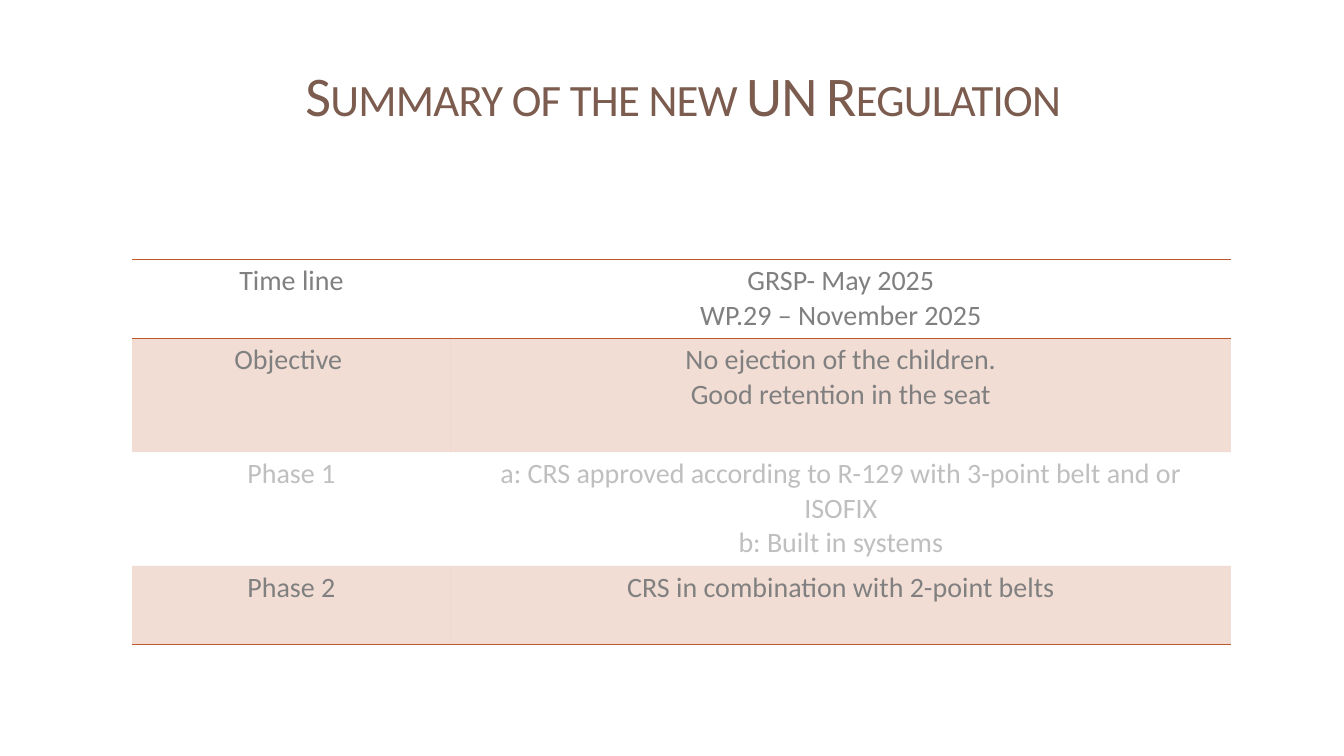
"""Build the slide that sums up the new UN Regulation in a table."""
from dataclasses import dataclass

from lxml.etree import SubElement
from pptx import Presentation
from pptx.dml.color import RGBColor
from pptx.enum.text import MSO_ANCHOR, MSO_AUTO_SIZE, PP_ALIGN
from pptx.oxml import parse_xml
from pptx.oxml.ns import nsdecls, qn
from pptx.slide import Slide
from pptx.table import _Cell
from pptx.text.text import TextFrame
from pptx.util import Cm, Pt


@dataclass(frozen=True)
class Theme:
    font: str = "Calibri"
    title: str = "7B5C4E"
    body: str = "808080"
    faded: str = "BFBFBF"
    accent: str = "BD582C"
    tint: int = 20
    rule: float = 1
    head: int = 40
    text: int = 20
    plain: str = "{2D5ABB26-0587-4C30-8999-92F81FD0307C}"


@dataclass(frozen=True)
class Row:
    label: str
    detail: str
    height: float
    color: str
    tinted: bool = False
    edges: tuple[str, ...] = ()


THEME = Theme()
ROWS = (
    Row("Time line", "GRSP- May 2025\nWP.29 – November 2025", 1.99,
        THEME.body, edges=("T", "B")),
    Row("Objective ", "No ejection of the children.\nGood retention in the seat", 2.87,
        THEME.body, tinted=True),
    Row("Phase 1", "a: CRS approved according to R-129 with 3-point belt and or ISOFIX\n"
        "b: Built in systems", 2.87, THEME.faded),
    Row("Phase 2", "CRS in combination with 2-point belts", 1.99,
        THEME.body, tinted=True, edges=("B",)),
)
WIDTHS = (8.03, 19.66)


def write(frame: TextFrame, text: str, *, size: int, color: str,
          spacing: float = 1, **marks: str) -> None:
    frame.text = text
    for para in frame.paragraphs:
        para.alignment = PP_ALIGN.CENTER
        para.line_spacing = spacing
        for run in para.runs:
            run.font.name = THEME.font
            run.font.size = Pt(size)
            run.font.color.rgb = RGBColor.from_string(color)
            for name, value in marks.items():
                run.font._element.set(name, value)


def paint(cell: _Cell, row: Row) -> None:
    props = cell._tc.get_or_add_tcPr()
    if row.tinted:
        cell.fill.solid()
        cell.fill.fore_color.rgb = RGBColor.from_string(THEME.accent)
        color = props.find(".//" + qn("a:srgbClr"))
        SubElement(color, qn("a:alpha")).set("val", str(THEME.tint * 1000))
    else:
        cell.fill.background()
    for spot, edge in enumerate(row.edges):
        props.insert(spot, parse_xml(
            f'<a:ln{edge} {nsdecls("a")} w="{Pt(THEME.rule)}"><a:solidFill>'
            f'<a:srgbClr val="{THEME.accent}"/></a:solidFill></a:ln{edge}>'))


def add_title(slide: Slide) -> None:
    title = slide.shapes.title
    title.left, title.top = Cm(4.23), Cm(1.12)
    title.width, title.height = Cm(25.4), Cm(2.79)
    frame = title.text_frame
    frame.word_wrap = True
    frame.auto_size = MSO_AUTO_SIZE.NONE
    frame.vertical_anchor = MSO_ANCHOR.MIDDLE
    write(frame, "Summary of the new UN Regulation", size=THEME.head,
          color=THEME.title, spacing=0.85, cap="small", spc="-50")


def add_grid(slide: Slide) -> None:
    table = slide.shapes.add_table(
        len(ROWS), len(WIDTHS), Cm(3.33), Cm(6.53), Cm(sum(WIDTHS)),
        Cm(sum(row.height for row in ROWS))).table
    table.first_row = table.horz_banding = False
    table._tbl.tblPr.find(qn("a:tableStyleId")).text = THEME.plain
    for column, width in zip(table.columns, WIDTHS):
        column.width = Cm(width)
    for line, row in zip(table.rows, ROWS):
        line.height = Cm(row.height)
        for cell, text in zip(line.cells, (row.label, row.detail)):
            write(cell.text_frame, text, size=THEME.text, color=row.color)
            paint(cell, row)


def main() -> None:
    deck = Presentation()
    deck.slide_width, deck.slide_height = Cm(33.87), Cm(19.05)
    slide = deck.slides.add_slide(deck.slide_layouts.get_by_name("Title Only"))
    add_title(slide)
    add_grid(slide)
    deck.save("out.pptx")


if __name__ == "__main__":
    main()
